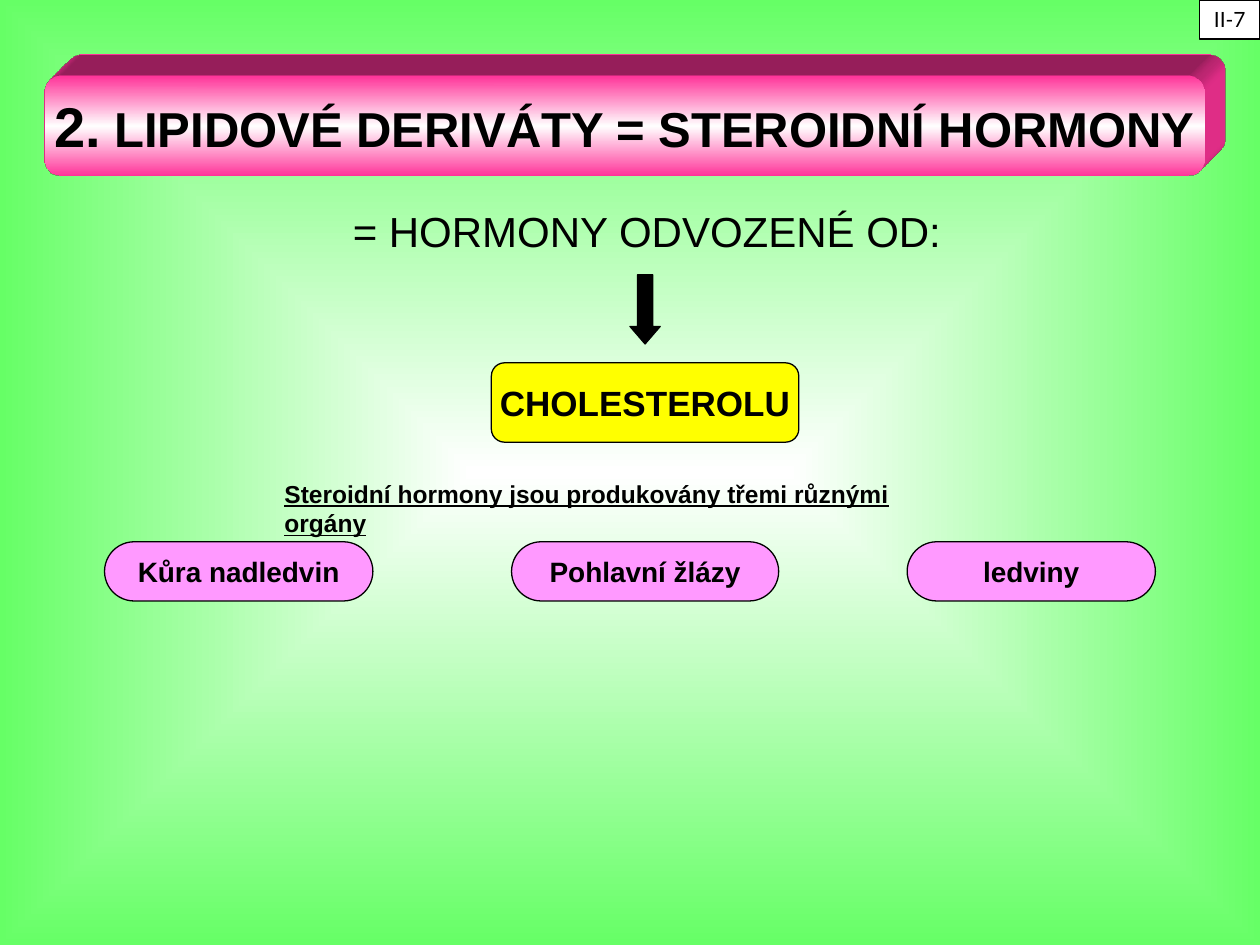
from dataclasses import dataclass

from pptx import Presentation
from pptx.dml.color import RGBColor
from pptx.enum.shapes import MSO_SHAPE
from pptx.enum.text import MSO_ANCHOR, MSO_AUTO_SIZE, PP_ALIGN
from pptx.oxml import parse_xml
from pptx.oxml.ns import nsdecls
from pptx.util import Inches, Pt

BANNER = MSO_SHAPE.FLOWCHART_ALTERNATE_PROCESS
ROUNDED = MSO_SHAPE.ROUNDED_RECTANGLE
RECTANGLE = MSO_SHAPE.RECTANGLE
DOWN_ARROW = MSO_SHAPE.DOWN_ARROW
LEFT, CENTER = PP_ALIGN.LEFT, PP_ALIGN.CENTER
TOP, MIDDLE = MSO_ANCHOR.TOP, MSO_ANCHOR.MIDDLE

COLUMNS, ROWS = 100, 75
CELL = Inches(0.1)
TITLE_ONLY = 5


@dataclass(frozen=True)
class Theme:
    font: str = "Arial"
    number_font: str = "Lato"
    ink: str = "000000"
    white: str = "FFFFFF"
    green: str = "66FF66"
    magenta: str = "FF3399"
    yellow: str = "FFFF00"
    pink: str = "FF99FF"
    title_number: int = 32
    title: int = 28
    lead: int = 24
    source: int = 20
    organ: int = 16
    note: int = 14
    page: int = 12
    line: float = 0.75


def gradient_xml(colors, direction):
    """Gradient fill with evenly spaced colours; direction is its a:lin or a:path element."""
    step = 100000 // (len(colors) - 1)
    stops = "".join(f'<a:gs pos="{index * step}"><a:srgbClr val="{color}"/></a:gs>'
                    for index, color in enumerate(colors))
    return (f'<a:gradFill {nsdecls("a")} rotWithShape="1">'
            f'<a:gsLst>{stops}</a:gsLst>{direction}</a:gradFill>')


def write(shape, runs, color, font, bold=False, underline=False,
          align=CENTER, anchor=MIDDLE, wrap=False, inset=0.1):
    """Fill a shape with one paragraph of (text, size) runs."""
    frame = shape.text_frame
    frame.auto_size = MSO_AUTO_SIZE.NONE
    frame.word_wrap = wrap
    frame.vertical_anchor = anchor
    frame.margin_left = frame.margin_right = Inches(inset)
    frame.margin_top = frame.margin_bottom = Inches(0.05)
    paragraph = frame.paragraphs[0]
    paragraph.alignment = align
    for text, size in runs:
        run = paragraph.add_run()
        run.text = text
        run.font.size = Pt(size)
        run.font.name = font
        run.font.bold = bold
        run.font.underline = underline
        run.font.color.rgb = RGBColor.from_string(color)


class SlideBuilder:
    """Places elements on the slide; every box is (left, top, width, height) in grid cells."""

    def __init__(self, presentation, theme):
        self.theme = theme
        self.slide = presentation.slides.add_slide(presentation.slide_layouts[TITLE_ONLY])

    def place(self, box):
        return [round(length * CELL) for length in box]

    def background(self):
        center = ('<a:path path="shape"><a:fillToRect l="50000" t="50000" '
                  'r="50000" b="50000"/></a:path>')
        fill = gradient_xml([self.theme.white, self.theme.green], center)
        self.slide.element.cSld.insert(0, parse_xml(
            f'<p:bg {nsdecls("p", "a")}><p:bgPr>{fill}<a:effectLst/></p:bgPr></p:bg>'))

    def title_banner(self, box, runs):
        theme = self.theme
        banner = self.slide.shapes.add_shape(BANNER, *self.place(box))
        banner.shadow.inherit = False
        banner.line.fill.background()
        properties = banner.element.spPr
        fill = gradient_xml([theme.magenta, theme.white, theme.magenta],
                            '<a:lin ang="5400000" scaled="1"/>')
        properties.insert(2, parse_xml(fill))
        properties.append(parse_xml(
            f'<a:scene3d {nsdecls("a")}><a:camera prst="legacyObliqueTopRight"/>'
            '<a:lightRig rig="legacyFlat3" dir="b"/></a:scene3d>'))
        properties.append(parse_xml(
            f'<a:sp3d {nsdecls("a")} extrusionH="430200" prstMaterial="legacyMatte">'
            '<a:bevelT w="13500" h="13500" prst="angle"/>'
            '<a:bevelB w="13500" h="13500" prst="angle"/>'
            f'<a:extrusionClr><a:srgbClr val="{theme.magenta}"/></a:extrusionClr></a:sp3d>'))

        title = self.slide.shapes.title
        title.left, title.top, title.width, title.height = self.place(box)
        write(title, runs, theme.ink, theme.font, bold=True, inset=0)
        banner.element.addnext(title.element)

    def shape(self, kind, box, fill, adjustments=()):
        shape = self.slide.shapes.add_shape(kind, *self.place(box))
        shape.shadow.inherit = False
        shape.fill.solid()
        shape.fill.fore_color.rgb = RGBColor.from_string(fill)
        shape.line.color.rgb = RGBColor.from_string(self.theme.ink)
        shape.line.width = Pt(self.theme.line)
        for index, value in enumerate(adjustments):
            shape.adjustments[index] = value
        return shape

    def label(self, kind, box, fill, text, size, font=None, bold=True, adjustments=()):
        shape = self.shape(kind, box, fill, adjustments)
        write(shape, [(text, size)], self.theme.ink, font or self.theme.font, bold=bold)

    def text(self, box, text, size, **style):
        shape = self.slide.shapes.add_textbox(*self.place(box))
        write(shape, [(text, size)], self.theme.ink, self.theme.font,
              anchor=TOP, wrap=True, **style)


def main():
    theme = Theme()
    presentation = Presentation()
    presentation.slide_width = COLUMNS * CELL
    presentation.slide_height = ROWS * CELL

    builder = SlideBuilder(presentation, theme)
    builder.background()
    builder.title_banner((3.5, 6, 92.1, 7.9), [
        ("2.", theme.title_number),
        (" LIPIDOVÉ DERIVÁTY = STEROIDNÍ HORMONY", theme.title)])
    builder.text((3, 15.8, 96.7, 5.2), "= HORMONY ODVOZENÉ OD:", theme.lead)
    builder.shape(DOWN_ARROW, (50, 21.8, 2.4, 5.5), theme.ink, (0.5, 0.58))
    builder.label(ROUNDED, (39, 28.8, 24.4, 6.3), theme.yellow, "CHOLESTEROLU", theme.source)
    builder.text((21.6, 37.5, 56.7, 5.3),
                 "Steroidní hormony jsou produkovány třemi různými orgány",
                 theme.note, bold=True, underline=True, align=LEFT)

    organs = [("Kůra nadledvin", 8.3, 21.3), ("Pohlavní žlázy", 40.6, 21.2), ("ledviny", 72, 19.7)]
    for name, left, width in organs:
        builder.label(ROUNDED, (left, 43, width, 4.7), theme.pink, name, theme.organ,
                      adjustments=(0.5,))

    builder.label(RECTANGLE, (95.2, 0, 4.8, 3.1), theme.white, "II-7", theme.page,
                  font=theme.number_font, bold=False)
    presentation.save("out.pptx")


if __name__ == "__main__":
    main()
